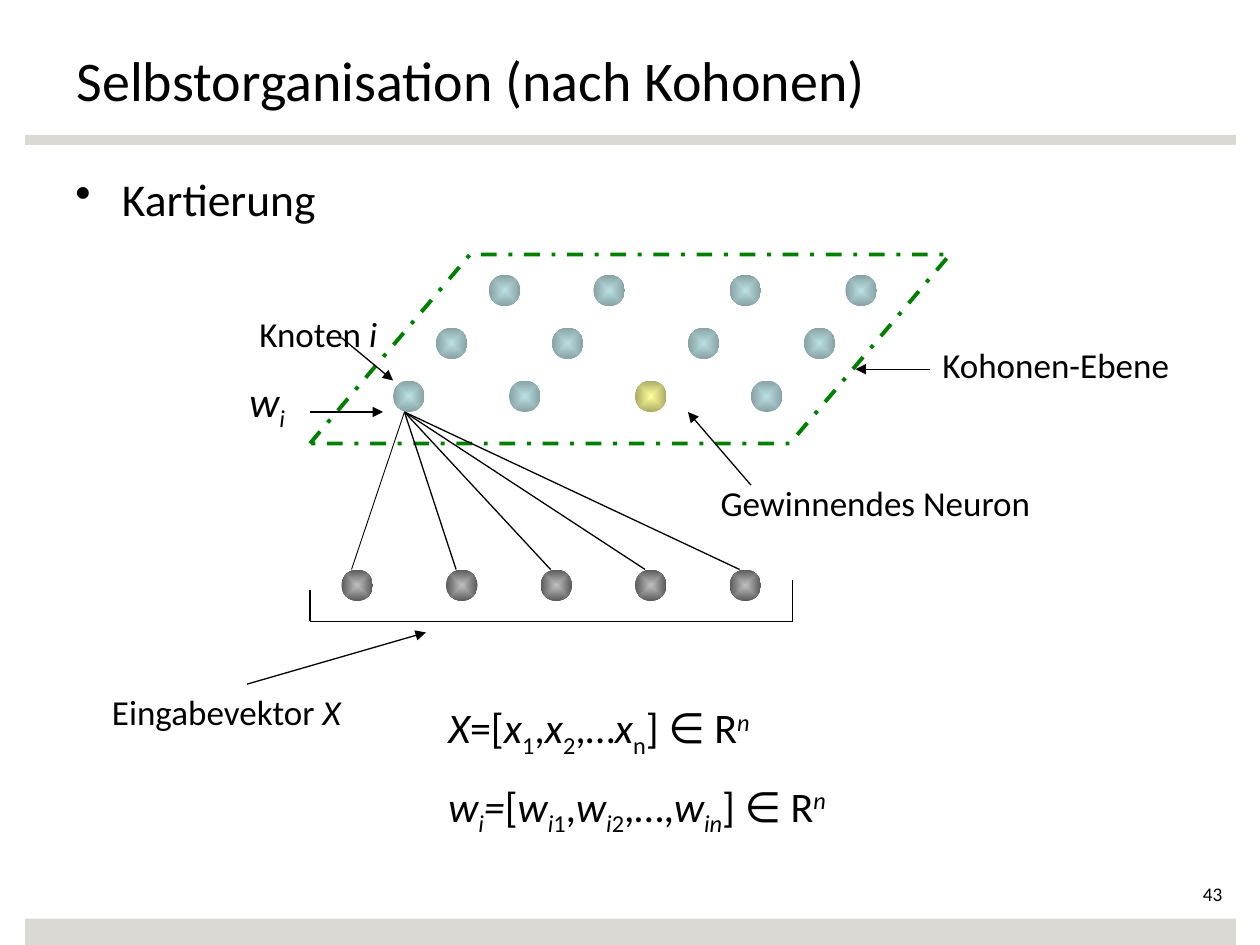
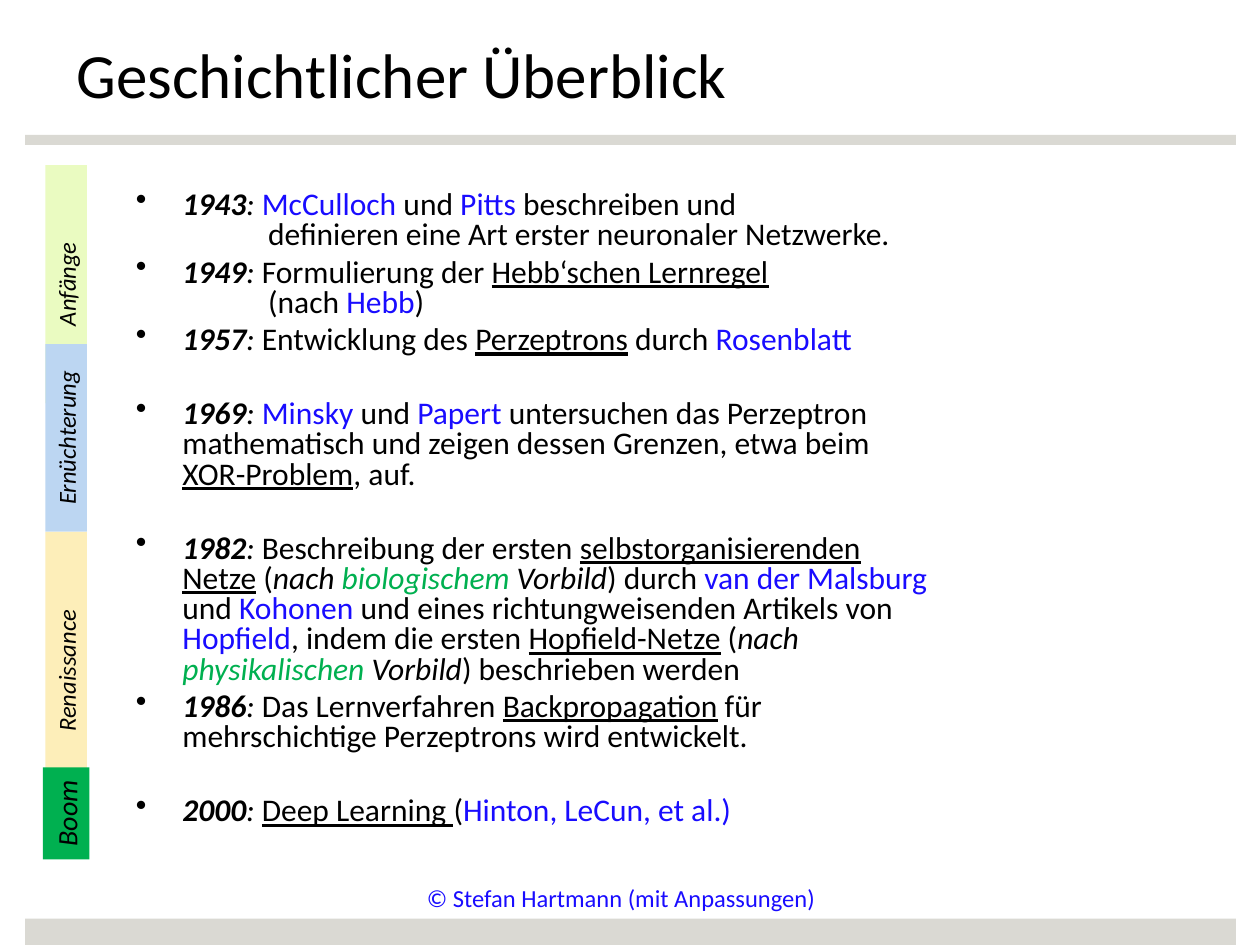
from lxml import etree
from pptx import Presentation
from pptx import util as u
from pptx.dml.color import RGBColor
from pptx.enum import dml, shapes, text
from pptx.oxml.ns import qn

PX = u.Inches(1) // 100
FONT = "Calibri"
COLORS = {
    "white": "FFFFFF", "black": "000000", "band": "DAD9D3", "blue": "190CFF",
    "green": "00B050", "plane": "008000", "start": "EAFBC1", "sober": "BCD6F2",
    "revival": "FDEEB9",
}
SPHERES = {
    "node": ("BBE0E3", "86A0A2"),
    "winner": ("FFFF99", "AAAA66"),
    "input": ("C0C0C0", "595959"),
}
BASELINES = {"sub": "-25000", "sup": "30000"}
ALIGN = text.PP_ALIGN


def px(*lengths):
    """Turn px lengths into EMU."""
    return [u.Emu(n * PX) for n in lengths]


def rgb(name):
    """Look up a named colour."""
    return RGBColor.from_string(COLORS[name])


def add_runs(p, size, runs):
    """Add (text, styles) runs; styles are b, i, u, sub, sup or a colour name."""
    for content, *styles in runs:
        names = styles[0].split() if styles else []
        r = p.add_run()
        r.text = content
        f = r.font
        f.name, f.size = FONT, u.Pt(size)
        f.bold, f.italic, f.underline = "b" in names, "i" in names, "u" in names
        f.color.rgb = rgb(next((n for n in names if n in COLORS), "black"))
        for name in names:
            if name in BASELINES:
                r._r.get_or_add_rPr().set("baseline", BASELINES[name])


def add_text(s, box, size, *paragraphs, align=ALIGN.LEFT, gap=0, wrap=True):
    """Add a text box with one list of runs per paragraph."""
    sp = s.shapes.add_textbox(*px(*box))
    tf = sp.text_frame
    tf.word_wrap = wrap
    for i, runs in enumerate(paragraphs):
        p = tf.paragraphs[0] if i == 0 else tf.add_paragraph()
        p.alignment = align
        if i:
            p.space_before = u.Pt(gap)
        add_runs(p, size, runs)
    return sp


def indent(p, left, bullet):
    """Indent a paragraph and hang a bullet in front of it if asked."""
    pPr = p._p.get_or_add_pPr()
    pPr.set("marL", str(left * PX))
    pPr.set("indent", str(-37 * PX if bullet else 0))
    if bullet:
        etree.SubElement(pPr, qn("a:buChar")).set("char", "•")
    else:
        etree.SubElement(pPr, qn("a:buNone"))


def add_shape(s, kind, box, fill=None):
    """Add a preset shape without outline or shadow."""
    sp = s.shapes.add_shape(kind, *px(*box))
    sp.shadow.inherit = False
    sp.line.fill.background()
    if fill:
        sp.fill.solid()
        sp.fill.fore_color.rgb = rgb(fill)
    else:
        sp.fill.background()
    return sp


def add_sphere(s, left, top, kind):
    """Add a round neuron shaded from its centre outwards."""
    sp = add_shape(s, shapes.MSO_SHAPE.OVAL, (left, top, 25, 25))
    sp.fill.gradient()
    for stop, color in zip(sp.fill.gradient_stops, SPHERES[kind]):
        stop.color.rgb = RGBColor.from_string(color)
    grad = sp._element.spPr.find(qn("a:gradFill"))
    grad.remove(grad.find(qn("a:lin")))
    shade = etree.SubElement(grad, qn("a:path"), path="shape")
    etree.SubElement(shade, qn("a:fillToRect"), l="50000", t="50000", r="50000", b="50000")


def add_line(s, start, end, arrow=False, width=0.75):
    """Add a straight black line, with an arrowhead at its end if asked."""
    line = s.shapes.add_connector(shapes.MSO_CONNECTOR.STRAIGHT, *px(*start, *end))
    line.line.color.rgb = rgb("black")
    line.line.width = u.Pt(width)
    if arrow:
        etree.SubElement(line.line._get_or_add_ln(), qn("a:tailEnd"), type="triangle")
    etree.SubElement(line._element.spPr, qn("a:effectLst"))
    return line


def add_slide(prs, title, size, top):
    """Add a blank slide with the shared bands and a title."""
    s = prs.slides.add_slide(prs.slide_layouts[6])
    s.background.fill.solid()
    s.background.fill.fore_color.rgb = rgb("white")
    for y, height in ((107, 8), (729, 21)):
        add_shape(s, shapes.MSO_SHAPE.RECTANGLE, (20, y, 961, height), "band")
    add_text(s, (51, top, 900, 65), size, [(title,)])
    return s


def add_network(s):
    """Draw the Kohonen plane, its neurons and the input layer."""
    plane = add_shape(s, shapes.MSO_SHAPE.PARALLELOGRAM, (246, 202, 508, 150))
    plane.adjustments[0] = 0.847
    plane.line.color.rgb = rgb("plane")
    plane.line.width = u.Pt(2.25)
    plane.line.dash_style = dml.MSO_LINE.DASH_DOT
    rows = ((388, 471, 579, 671), (346, 438, 546, 638), (312, 404, 504, 596))
    for row, lefts in enumerate(rows):
        for col, left in enumerate(lefts):
            kind = "winner" if (row, col) == (2, 2) else "node"
            add_sphere(s, left, 218 + 42 * row, kind)
    for i, left in enumerate((271, 354, 429, 504, 579)):
        add_sphere(s, left, 452, "input")
        add_line(s, (left + 8, 452), (321, 327), width=0.75 if i else 0.5)
    bracket = ((246, 468), (246, 493), (629, 493), (629, 460))
    for start, end in zip(bracket, bracket[1:]):
        add_line(s, start, end)


def add_labels(s):
    """Name the parts of the network and point at them."""
    add_text(s, (562, 377, 308, 44), 20, [("Gewinnendes Neuron",)])
    add_text(s, (188, 293, 108, 50), 24, [("w", "i"), ("i", "i sub")])
    add_text(s, (196, 243, 125, 44), 20, [("Knoten ",), ("i", "i")])
    add_text(s, (79, 543, 258, 44), 20, [("Eingabevektor ",), ("X", "i")])
    plane_label = add_text(s, (738, 268, 208, 50), 20, [("Kohonen-Ebene",)])
    for start, end in (((596, 385), (546, 327)), ((246, 327), (304, 327)),
                       ((271, 268), (312, 302)), ((196, 543), (338, 502))):
        add_line(s, start, end, arrow=True)
    add_line(s, (738, 293), (679, 293), arrow=True).begin_connect(plane_label, 1)


def add_history(s, entries):
    """List (space before, year, runs, continuation runs) entries as bullets."""
    tf = s.shapes.add_textbox(*px(98, 147, 654, 528)).text_frame
    tf.word_wrap = True
    for i, (gap, year, runs, more) in enumerate(entries):
        p = tf.add_paragraph() if i else tf.paragraphs[0]
        indent(p, 37, True)
        p.line_spacing = 0.8
        if i:
            p.space_before = u.Pt(gap)
        add_runs(p, 18, [(year, "b i"), (": ", "i"), *runs])
        if more:
            p = tf.add_paragraph()
            indent(p, 105, False)
            p.line_spacing = 0.8
            add_runs(p, 18, more)


def add_era(s, name, top, height, width, fill, size=14):
    """Add an upright era label; its text runs from bottom to top."""
    left = 52.5 - height / 2
    middle = top + height / 2
    box = (round(left), round(middle - width / 2), height, width)
    sp = add_shape(s, shapes.MSO_SHAPE.RECTANGLE, box, fill)
    sp.rotation = 270
    tf = sp.text_frame
    tf.word_wrap = False
    p = tf.paragraphs[0]
    p.alignment = ALIGN.CENTER
    add_runs(p, size, [(name, "i")])


def build_kohonen(prs):
    """Build the slide on self-organisation."""
    s = add_slide(prs, "Selbstorganisation (nach Kohonen)", 32, 31)
    topic = add_text(s, (50, 131, 900, 60), 26, [("Kartierung",)])
    indent(topic.text_frame.paragraphs[0], 37, True)
    add_network(s)
    add_labels(s)
    space = [("] ∈ R",), ("n", "i sup")]
    vector = [("X", "i"), ("=[",), ("x", "i"), ("1", "sub"), (",",), ("x", "i"),
              ("2", "sub"), (",…",), ("x", "i"), ("n", "sub"), *space]
    weights = [("w", "i"), ("i", "i sub"), ("=", "i"), ("[",), ("w", "i"), ("i", "i sub"),
               ("1", "sub"), (",",), ("w", "i"), ("i", "i sub"), ("2", "sub"), (",…,",),
               ("w", "i"), ("in", "i sub"), *space]
    add_text(s, (346, 552, 400, 111), 24, vector, weights, gap=12)
    number = add_text(s, (870, 700, 110, 22), 11, [("43",)], align=ALIGN.RIGHT)
    tf = number.text_frame
    tf.margin_left = tf.margin_top = tf.margin_bottom = 0


def build_history(prs):
    """Build the slide on the history of neural networks."""
    s = add_slide(prs, "Geschichtlicher Überblick", 36, 23)
    add_history(s, (
        (0, "1943", [("McCulloch ", "blue"), ("und ",), ("Pitts ", "blue"),
                     ("beschreiben und",)],
         [("definieren eine Art erster neuronaler Netzwerke.",)]),
        (4, "1949", [("Formulierung der ",), ("Hebb‘schen Lernregel", "u")],
         [("(nach ",), ("Hebb", "blue"), (")",)]),
        (4, "1957", [("Entwicklung des ",), ("Perzeptrons", "u"), (" durch ",),
                     ("Rosenblatt", "blue")], None),
        (25, "1969", [("Minsky ", "blue"), ("und ",), ("Papert ", "blue"),
                      ("untersuchen das Perzeptron mathematisch und zeigen "
                       "dessen Grenzen, etwa beim ",),
                      ("XOR-Problem", "u"), (", auf.",)], None),
        (25, "1982", [("Beschreibung der ersten ",), ("selbstorganisierenden Netze", "u"),
                      (" (",), ("nach ", "i"), ("biologischem", "i green"),
                      (" Vorbild", "i"), (") durch ",), ("van der Malsburg ", "blue"),
                      ("und ",), ("Kohonen ", "blue"),
                      ("und eines richtungweisenden Artikels von ",),
                      ("Hopfield", "blue"), (", indem die ersten ",),
                      ("Hopfield-Netze", "u"), (" (",), ("nach ", "i"),
                      ("physikalischen", "i green"), (" Vorbild", "i"),
                      (") beschrieben werden",)], None),
        (4, "1986", [("Das Lernverfahren ",), ("Backpropagation", "u"),
                     (" für mehrschichtige Perzeptrons wird entwickelt.",)], None),
        (25, "2000", [("Deep Learning ", "u"), ("(",),
                      ("Hinton, LeCun, et al.)", "blue")], None),
    ))
    add_era(s, "Anfänge", 131, 189, 33, "start")
    add_era(s, "Ernüchterung", 273, 149, 33, "sober")
    add_era(s, "Renaissance", 422, 221, 33, "revival")
    add_era(s, "Boom", 609, 73, 37, "green", size=16)
    add_text(s, (325, 696, 336, 34), 14, [("© Stefan Hartmann (mit Anpassungen)", "blue")],
             align=ALIGN.CENTER, wrap=False)


def main():
    """Build both slides and save them."""
    prs = Presentation()
    prs.slide_width, prs.slide_height = px(1000, 750)
    build_kohonen(prs)
    build_history(prs)
    prs.save("out.pptx")


if __name__ == "__main__":
    main()
